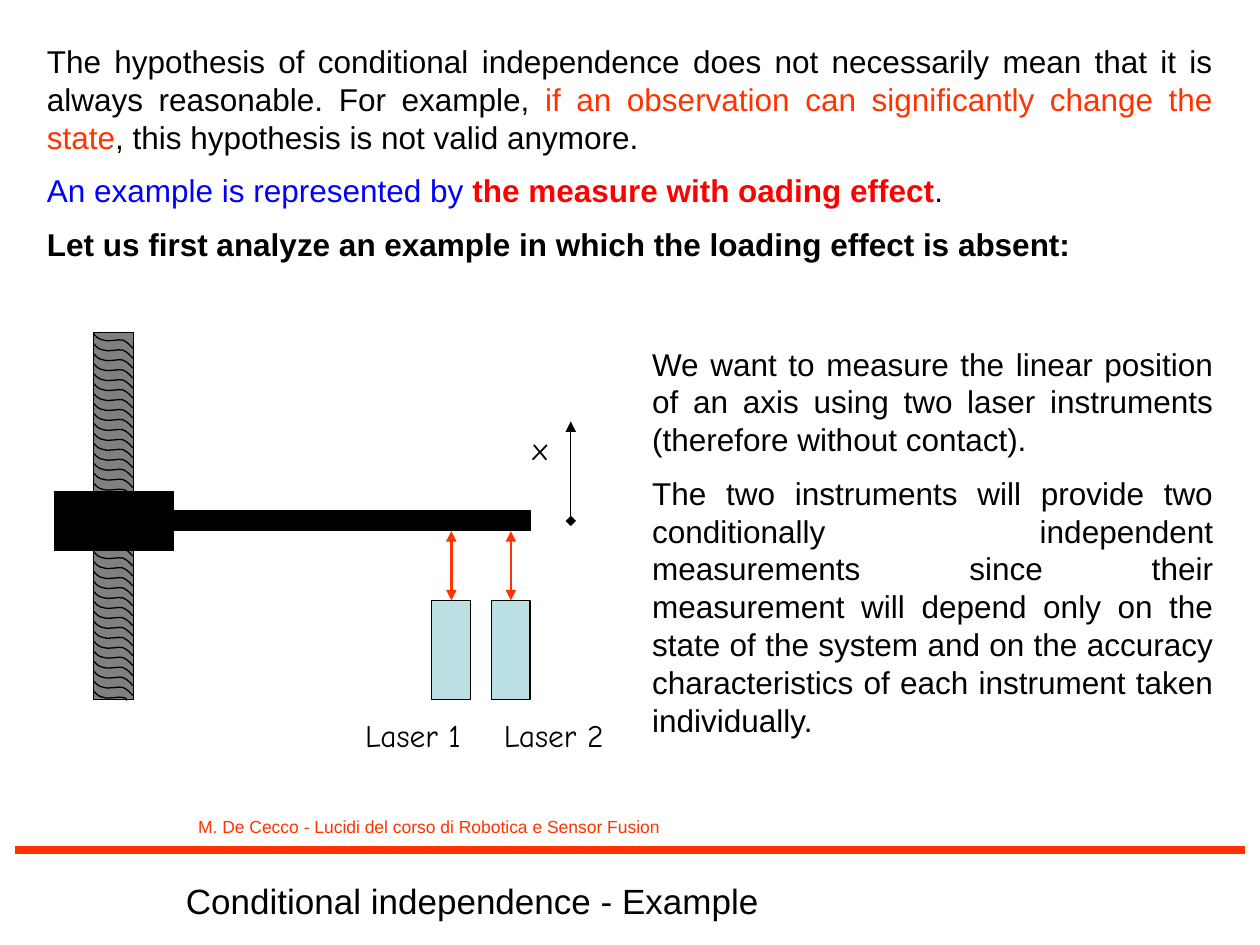
from lxml import etree
from pptx import Presentation
from pptx.dml.color import RGBColor
from pptx.enum.shapes import MSO_CONNECTOR, MSO_SHAPE
from pptx.enum.text import MSO_AUTO_SIZE, PP_ALIGN
from pptx.oxml.ns import qn
from pptx.util import Inches, Pt

BLACK = RGBColor(0x00, 0x00, 0x00)
GRAY = RGBColor(0x80, 0x80, 0x80)
ORANGE = RGBColor(0xFF, 0x33, 0x00)
RED = RGBColor(0xFF, 0x00, 0x00)
BLUE = RGBColor(0x00, 0x00, 0xFF)
PALE_BLUE = RGBColor(0xBB, 0xE0, 0xE3)

RECTANGLE = MSO_SHAPE.RECTANGLE
STRAIGHT = MSO_CONNECTOR.STRAIGHT
LEFT, RIGHT, JUSTIFY = PP_ALIGN.LEFT, PP_ALIGN.RIGHT, PP_ALIGN.JUSTIFY
FIT_SHAPE = MSO_AUTO_SIZE.SHAPE_TO_FIT_TEXT

COLUMNS = 100
HAND_FONT = "Comic Neue"
RAIL_LEFT = 7.45
WAVE_PITCH = 0.79
WAVES_PER_RUN = 15
WAVE = [(3.1, 1.15), (3, 1.05), (2.7, 0.65), (2.3, 0.5), (2, 0.4),
        (1.2, 0.65), (0.8, 0.5), (0.4, 0.45), (0.2, 0.25), (0, 0)]
END_WAVE = [(2.6, 0.75), (2.6, 0.7), (2.7, 0.55)] + WAVE[3:]


def add_span(para, text, size=18, font="Arial", color=BLACK, bold=False):
    """Append formatted text to a paragraph."""
    span = para.add_run()
    span.text = text
    span.font.size = Pt(size)
    span.font.name = font
    span.font.color.rgb = color
    span.font.bold = bold


def bend(stroke):
    """Turn each three straight segments of a stroke into one cubic curve."""
    outline = next(stroke._element.iter(qn("a:moveTo"))).getparent()
    segments = outline.findall(qn("a:lnTo"))
    for first in range(0, len(segments), 3):
        curve = etree.SubElement(outline, qn("a:cubicBezTo"))
        for segment in segments[first:first + 3]:
            curve.append(segment[0])
            outline.remove(segment)


class SlideSketch:
    """Draw elements on a slide with a square grid of 100 columns."""

    def __init__(self, deck):
        self.slide = deck.slides.add_slide(deck.slide_layouts[6])
        self.shapes = self.slide.shapes
        self.cell = deck.slide_width / COLUMNS
        self.thin = 0.75

    def grid(self, *lengths):
        """Turn grid cells into slide lengths."""
        return [round(length * self.cell) for length in lengths]

    def text(self, place, paragraphs, align=LEFT, wrap=True, **style):
        """Add a text box of paragraphs made of (text, format) pairs."""
        frame = self.shapes.add_textbox(*self.grid(*place)).text_frame
        frame.word_wrap = wrap
        frame.auto_size = FIT_SHAPE
        for index, spans in enumerate(paragraphs):
            para = frame.add_paragraph() if index else frame.paragraphs[0]
            para.alignment = align
            if index:
                para.space_before = Pt(9)
            for words, changes in spans:
                add_span(para, words, **{**style, **changes})

    def label(self, place, words, **style):
        """Add a one-paragraph text box."""
        self.text(place, [[(words, {})]], **style)

    def block(self, place, fill):
        """Add a filled rectangle with a thin outline."""
        box = self.shapes.add_shape(RECTANGLE, *self.grid(*place))
        box.shadow.inherit = False
        box.fill.solid()
        box.fill.fore_color.rgb = fill
        box.line.color.rgb = BLACK
        box.line.width = Pt(self.thin)

    def line(self, start, end, color, width, head=None, tail=None):
        """Add a straight line with optional arrowheads."""
        link = self.shapes.add_connector(STRAIGHT, *self.grid(*start, *end))
        link.line.color.rgb = color
        link.line.width = Pt(width)
        outline = link.line._get_or_add_ln()
        for tag, kind in (("a:headEnd", head), ("a:tailEnd", tail)):
            if kind:
                etree.SubElement(outline, qn(tag), type=kind)
        etree.SubElement(link._element.spPr, qn("a:effectLst"))

    def wave(self, top, controls):
        """Add one wavy stroke across the rail."""
        points = [self.grid(RAIL_LEFT + x, top + y) for x, y in controls]
        builder = self.shapes.build_freeform(*points[0])
        builder.add_line_segments(points[1:], close=False)
        stroke = builder.convert_to_shape()
        bend(stroke)
        stroke.shadow.inherit = False
        stroke.fill.background()
        stroke.line.color.rgb = BLACK
        stroke.line.width = Pt(self.thin)


def main():
    """Build the slide and save it."""
    deck = Presentation()
    deck.slide_width, deck.slide_height = Inches(10), Inches(7.5)
    sketch = SlideSketch(deck)

    sketch.line((1.2, 67.43), (98.8, 67.43), ORANGE, 4.5)
    sketch.label((11.4, 64.3, 41.9, 2.7),
                 "M. De Cecco - Lucidi del corso di Robotica e Sensor Fusion",
                 align=RIGHT, size=10, color=ORANGE)
    sketch.text((2.74, 2.84, 94.5, 19.2), [
        [("The hypothesis of conditional independence does not necessarily mean "
          "that it is always reasonable. For example, ", {}),
         ("if an observation can significantly change the state", {"color": ORANGE}),
         (", this hypothesis is not valid anymore.", {})],
        [("An example is represented by ", {"color": BLUE}),
         ("the measure with oading effect", {"color": RED, "bold": True}),
         (".", {})],
        [("Let us first analyze an example in which the loading effect is absent:",
          {"bold": True})],
    ], align=JUSTIFY)

    lasers = [("Laser 1", 34.25, 28), ("Laser 2", 38.98, 39)]
    for name, left, label_left in lasers:
        top, middle = 47.65, left + 1.57
        sketch.block((left, top, 3.1, 7.87), PALE_BLUE)
        sketch.line((middle, top), (middle, top - 5.5), ORANGE, 1.5, "triangle", "triangle")
        sketch.label((label_left, 56.3, 11, 4.1), name, wrap=False, font=HAND_FONT)
    sketch.line((45.3, 41.35), (45.3, 33.45), BLACK, 0.75, "diamond", "triangle")
    sketch.label((41.3, 33.55, 3.3, 4.1), "x", wrap=False, font=HAND_FONT)

    sketch.block((RAIL_LEFT, 26.4, 3.15, 29.1), GRAY)
    sketch.block((4.33, 39, 9.45, 4.7), BLACK)
    sketch.block((13.78, 40.55, 28.35, 1.57), BLACK)
    for run_top in (26.5, 43):
        for index in range(WAVES_PER_RUN):
            sketch.wave(run_top + index * WAVE_PITCH, WAVE)
        sketch.wave(run_top + WAVES_PER_RUN * WAVE_PITCH, END_WAVE)

    sketch.text((50.77, 26.86, 46.5, 32.8), [
        [("We want to measure the linear position of an axis using two laser "
          "instruments (therefore without contact).", {})],
        [("The two instruments will provide two conditionally independent "
          "measurements since their measurement will depend only on the state of "
          "the system and on the accuracy characteristics of each instrument taken "
          "individually.", {})],
    ], align=JUSTIFY)
    sketch.label((13.77, 69.3, 47.9, 4.4), "Conditional independence - Example",
                 wrap=False, size=20)
    deck.save("out.pptx")


if __name__ == "__main__":
    main()
